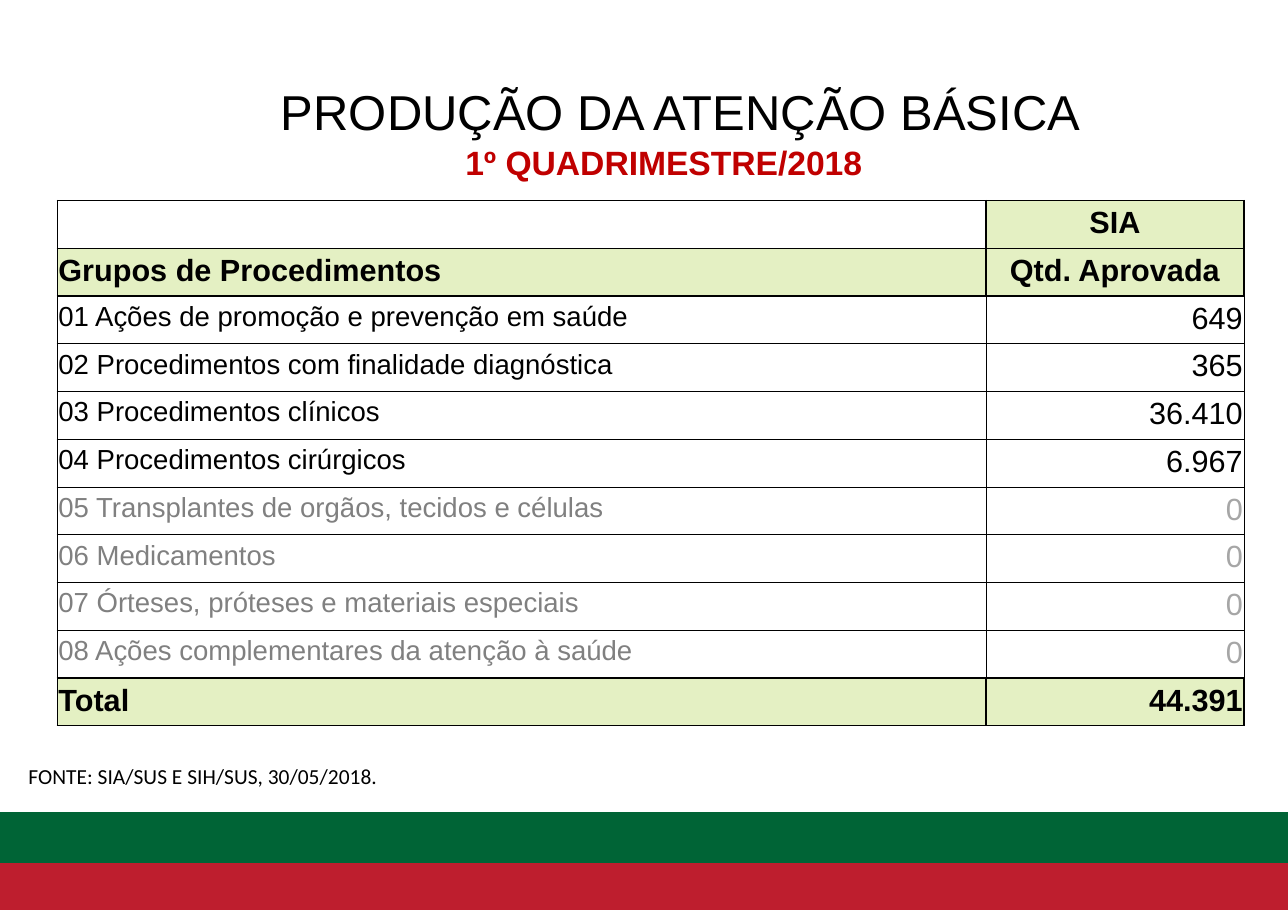
from lxml import etree
from pptx import Presentation
from pptx.dml.color import RGBColor
from pptx.enum import shapes, text
from pptx.oxml import ns
from pptx.util import Inches, Pt

HEX = {"black": "000000", "red": "C00000", "pale": "E4F0C3", "grey": "808080",
       "light": "A6A6A6", "green": "006436", "crimson": "BE1E2E"}
TITLE = "PRODUÇÃO DA ATENÇÃO BÁSICA"
TERM = "1º QUADRIMESTRE/2018"
SOURCE = "FONTE: SIA/SUS E SIH/SUS, 30/05/2018."
HEADS = [("", "SIA"), ("Grupos de Procedimentos", "Qtd. Aprovada")]
GROUPS = [
    ("01 Ações de promoção e prevenção em saúde", "649"),
    ("02 Procedimentos com finalidade diagnóstica", "365"),
    ("03 Procedimentos clínicos", "36.410"),
    ("04 Procedimentos cirúrgicos", "6.967"),
    ("05 Transplantes de orgãos, tecidos e células", "0"),
    ("06 Medicamentos", "0"),
    ("07 Órteses, próteses e materiais especiais", "0"),
    ("08 Ações complementares da atenção à saúde", "0"),
]
TOTAL = ("Total", "44.391")
BANDS = [("crimson", 7.81), ("green", 7.38)]
WIDTHS = [8.43, 2.34]
TALL = 4.77
THIN, THICK = 0.5, 0.96
ALIGN = text.PP_ALIGN


def color(name):
    return RGBColor.from_string(HEX[name])


def write(para, words, size, tint="black", bold=False, face="Arial"):
    run = para.add_run()
    run.text = words
    font = run.font
    font.size, font.bold, font.name = Pt(size), bold, face
    font.color.rgb = color(tint)


def inset(item, left, top, right, bottom):
    item.margin_left, item.margin_top = Inches(left), Inches(top)
    item.margin_right, item.margin_bottom = Inches(right), Inches(bottom)


def border(cell, side, width):
    props = cell._tc.get_or_add_tcPr()
    line = etree.SubElement(props, ns.qn("a:ln" + side), w=str(Pt(width)))
    fill = etree.SubElement(line, ns.qn("a:solidFill"))
    etree.SubElement(fill, ns.qn("a:srgbClr"), val=HEX["black"])


def add_bands(slide):
    for tint, top in BANDS:
        band = slide.shapes.add_shape(shapes.MSO_SHAPE.RECTANGLE, 0, Inches(top),
                                      Inches(11.69), Inches(0.45))
        band.shadow.inherit = False
        band.fill.solid()
        band.fill.fore_color.rgb = color(tint)
        band.line.color.rgb = color(tint)
        band.line.width = Pt(0.75)


def add_title(slide):
    title = slide.shapes.title
    title.left, title.top = Inches(2.13), Inches(0.57)
    title.width, title.height = Inches(7.79), Inches(1.38)
    frame = title.text_frame
    frame.word_wrap = True
    frame.auto_size = text.MSO_AUTO_SIZE.NONE
    frame.vertical_anchor = text.MSO_ANCHOR.TOP
    inset(frame, 0, 0.17, 0, 0)
    head, term = frame.paragraphs[0], frame.add_paragraph()
    head.alignment, term.alignment = ALIGN.LEFT, ALIGN.CENTER
    head._p.get_or_add_pPr().set("indent", str(Inches(0.42)))
    term.space_before = Pt(1)
    write(head, TITLE, 32)
    write(term, TERM, 22, "red", True)


def add_grid(slide):
    rows = HEADS + GROUPS + [TOTAL]
    last = len(rows) - 1
    strong = {0, 1, last}
    grid = slide.shapes.add_table(len(rows), 2, Inches(0.52), Inches(1.82),
                                  Inches(sum(WIDTHS)), Inches(TALL)).table
    grid.first_row = grid.horz_banding = False
    for col, width in zip(grid.columns, WIDTHS):
        col.width = Inches(width)
    for r, row in enumerate(rows):
        grid.rows[r].height = Inches(TALL / len(rows))
        bold = r in strong
        for c, words in enumerate(row):
            cell = grid.cell(r, c)
            inset(cell, 0.01, 0.05, 0.01, 0.05)
            thick = {"L": bold or c == 0, "R": bold,
                     "T": bold or r - 1 in strong, "B": bold or r + 1 in strong}
            for side, wide in thick.items():
                border(cell, side, THICK if wide else THIN)
            if not words:
                cell.fill.background()
                continue
            if bold:
                cell.fill.solid()
                cell.fill.fore_color.rgb = color("pale")
            else:
                cell.fill.background()
            para = cell.text_frame.paragraphs[0]
            if c:
                para.alignment = ALIGN.CENTER if r < len(HEADS) else ALIGN.RIGHT
            tint = ("grey", "light")[c] if row[1] == "0" else "black"
            write(para, words, 20 if bold or c else 18, tint, bold)


def add_source(slide):
    box = slide.shapes.add_textbox(Inches(0.16), Inches(6.88), Inches(4.56), Inches(0.42))
    box.text_frame.word_wrap = True
    write(box.text_frame.paragraphs[0], SOURCE, 14, face="Calibri")


def main():
    deck = Presentation()
    deck.slide_width, deck.slide_height = Inches(11.69), Inches(8.27)
    slide = deck.slides.add_slide(deck.slide_layouts[5])
    add_bands(slide)
    add_title(slide)
    add_grid(slide)
    add_source(slide)
    deck.save("out.pptx")


if __name__ == "__main__":
    main()
